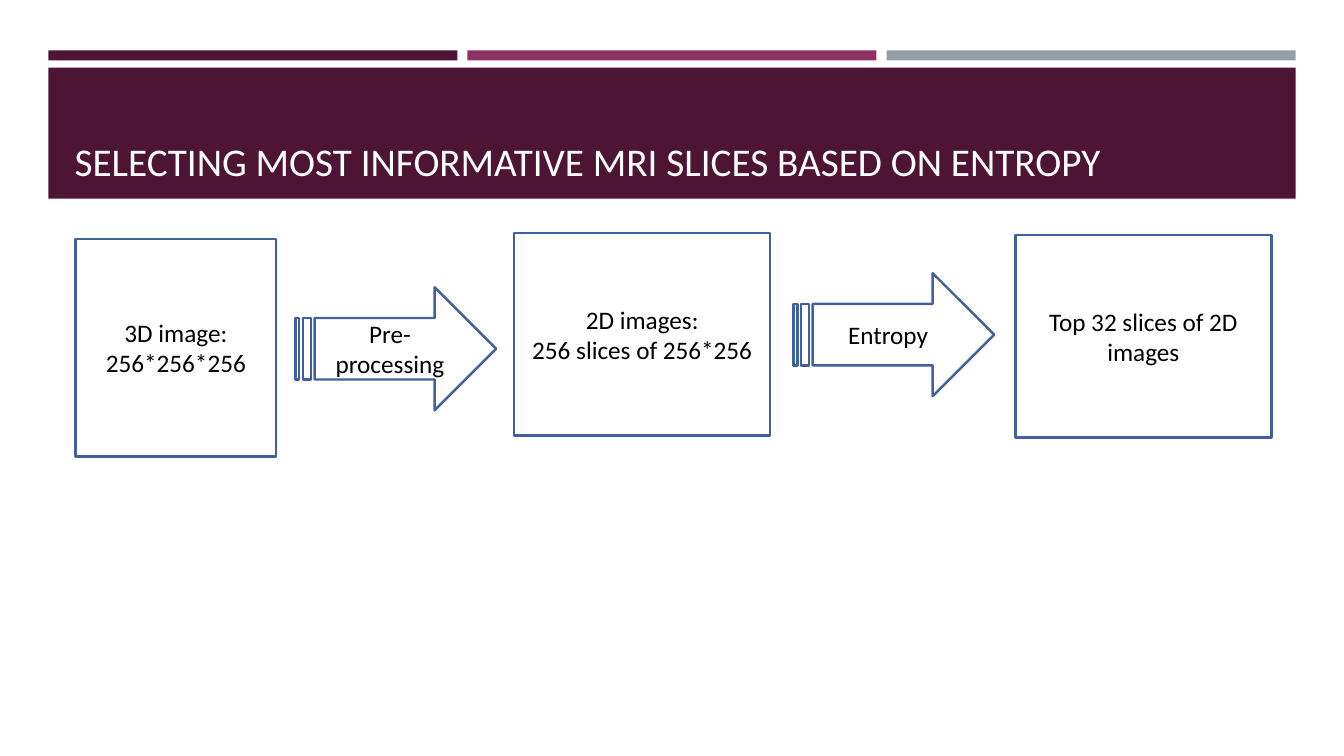
from dataclasses import dataclass

from pptx import Presentation
from pptx.dml.color import RGBColor
from pptx.enum.shapes import MSO_SHAPE
from pptx.enum.text import MSO_ANCHOR, MSO_AUTO_SIZE, PP_ALIGN
from pptx.util import Inches, Pt

RECTANGLE = MSO_SHAPE.RECTANGLE
ARROW = MSO_SHAPE.STRIPED_RIGHT_ARROW
LEFT, CENTER = PP_ALIGN.LEFT, PP_ALIGN.CENTER
MIDDLE, BOTTOM = MSO_ANCHOR.MIDDLE, MSO_ANCHOR.BOTTOM
NO_AUTOFIT = MSO_AUTO_SIZE.NONE
TITLE_ONLY = 5


@dataclass(frozen=True)
class Theme:
    plum: RGBColor = RGBColor.from_string("4D1434")
    magenta: RGBColor = RGBColor.from_string("903163")
    gray: RGBColor = RGBColor.from_string("969FA7")
    outline: RGBColor = RGBColor.from_string("40619D")
    white: RGBColor = RGBColor.from_string("FFFFFF")
    black: RGBColor = RGBColor.from_string("000000")
    font: str = "Calibri"
    title_size: int = 28
    body_size: int = 18
    line_width: float = 1.75


THEME = Theme()


def add_block(page, kind, box, fill, outline=None):
    block = page.shapes.add_shape(kind, *map(Inches, box))
    block.shadow.inherit = False
    block.fill.solid()
    block.fill.fore_color.rgb = fill
    if outline is None:
        block.line.fill.background()
    else:
        block.line.color.rgb = outline
        block.line.width = Pt(THEME.line_width)
    return block


def write(shape, lines, size, color, align, anchor):
    frame = shape.text_frame
    settings = {"word_wrap": True, "auto_size": NO_AUTOFIT, "vertical_anchor": anchor}
    for name, value in settings.items():
        setattr(frame, name, value)
    frame.text = "\n".join(lines)
    for para in frame.paragraphs:
        para.alignment = align
        for span in para.runs:
            for name, value in {"name": THEME.font, "size": Pt(size)}.items():
                setattr(span.font, name, value)
            span.font.color.rgb = color


def add_header(page, box, title_text):
    left, top, width, height = box
    # Three accent bars in equal columns
    gap, bar_height, band_offset = 0.1, 0.1, 0.17
    bar_width = (width - 2 * gap) / 3
    for index, color in enumerate((THEME.plum, THEME.magenta, THEME.gray)):
        bar_left = left + index * (bar_width + gap)
        add_block(page, RECTANGLE, (bar_left, top, bar_width, bar_height), color)

    # Title band, with the title placed in front of it
    band_height = height - band_offset
    band = add_block(page, RECTANGLE, (left, top + band_offset, width, band_height), THEME.plum)
    title = page.shapes.title
    band._element.addnext(title._element)
    place = {"left": left + 0.16, "top": top + 0.27, "width": width - 0.31, "height": 1.11}
    for name, value in place.items():
        setattr(title, name, Inches(value))
    write(title, [title_text], THEME.title_size, THEME.white, LEFT, BOTTOM)


def add_flow(page, box):
    left, top, _, _ = box
    small, large, arrow = (1.99, 2.16), (2.54, 2.01), (1.99, 1.22)
    # Kind, offset from the region's corner, size, lines of text
    steps = (
        (RECTANGLE, (0, 0.06), small, ["3D image:", "256*256*256"]),
        (ARROW, (2.18, 0.54), arrow, ["Pre-processing"]),
        (RECTANGLE, (4.35, 0), large, ["2D images:", "256 slices of 256*256"]),
        (ARROW, (7.12, 0.4), arrow, ["Entropy"]),
        (RECTANGLE, (9.32, 0.02), large, ["Top 32 slices of 2D images"]),
    )
    for kind, (across, down), size, lines in steps:
        step = add_block(page, kind, (left + across, top + down, *size), THEME.white, THEME.outline)
        write(step, lines, THEME.body_size, THEME.black, CENTER, MIDDLE)


def main():
    deck = Presentation()
    deck.slide_width, deck.slide_height = Inches(13.33), Inches(7.5)
    page = deck.slides.add_slide(deck.slide_layouts[TITLE_ONLY])
    add_header(page, (0.48, 0.5, 12.37, 1.47),
               "SELECTING MOST INFORMATIVE MRI SLICES BASED ON ENTROPY")
    add_flow(page, (0.75, 2.31, 11.86, 2.22))
    deck.save("out.pptx")


if __name__ == "__main__":
    main()
